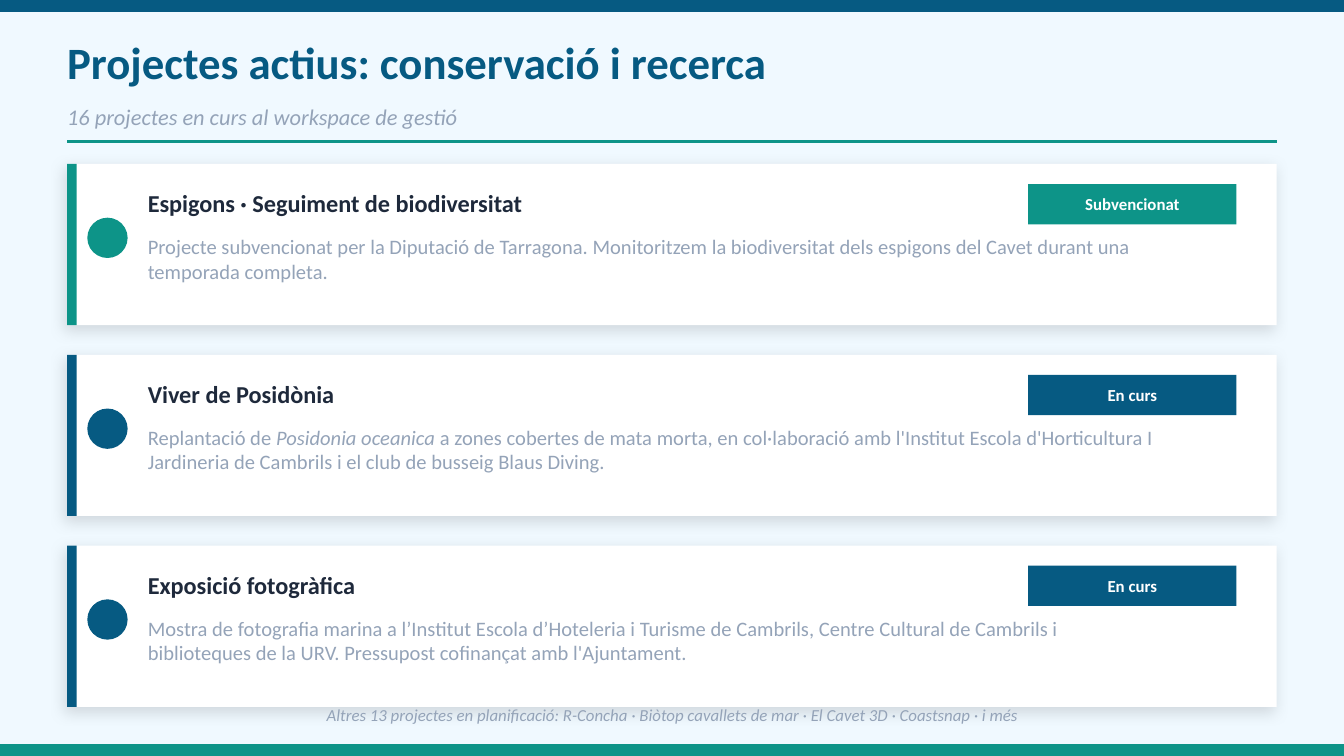
from dataclasses import dataclass

from lxml import etree
from pptx import Presentation
from pptx.dml.color import RGBColor
from pptx.enum.shapes import MSO_CONNECTOR as Connector, MSO_SHAPE as Shape
from pptx.enum.text import MSO_ANCHOR as Anchor, PP_ALIGN as Align
from pptx.oxml.ns import qn
from pptx.util import Inches, Pt


@dataclass(frozen=True)
class Theme:
    font: str = "Calibri"
    background: str = "F0F9FF"
    navy: str = "065A82"
    teal: str = "0D9488"
    muted: str = "94A3B8"
    ink: str = "1E293B"
    white: str = "FFFFFF"
    title: int = 24
    subtitle: int = 12
    heading: int = 13
    body: int = 11
    small: int = 9


THEME = Theme()
WIDTH = 10
HEIGHT = WIDTH * 9 / 16
MARGIN = 0.5
CONTENT_WIDTH = WIDTH - 2 * MARGIN
BAND_HEIGHT = 0.08
CARD_TOP, CARD_HEIGHT, CARD_GAP = 1.22, 1.2, 0.22

# Each project: heading, status, accent colour, description as (text, italic) runs
PROJECTS = [
    ("Espigons · Seguiment de biodiversitat", "Subvencionat", THEME.teal, [
        ("Projecte subvencionat per la Diputació de Tarragona. Monitoritzem la "
         "biodiversitat dels espigons del Cavet durant una temporada completa.", False),
    ]),
    ("Viver de Posidònia", "En curs", THEME.navy, [
        ("Replantació de ", False),
        ("Posidonia oceanica", True),
        (" a zones cobertes de mata morta, en col·laboració amb l'Institut Escola "
         "d'Horticultura I Jardineria de Cambrils i el club de busseig Blaus Diving.", False),
    ]),
    ("Exposició fotogràfica", "En curs", THEME.navy, [
        ("Mostra de fotografia marina a l’Institut Escola d’Hoteleria i Turisme de "
         "Cambrils, Centre Cultural de Cambrils i biblioteques de la URV. "
         "Pressupost cofinançat amb l'Ajuntament.", False),
    ]),
]


def color(value):
    return RGBColor.from_string(value)


def add_text(slide, box, runs, size, ink, bold=False, align=Align.LEFT, anchor=Anchor.MIDDLE):
    frame = slide.shapes.add_textbox(*map(Inches, box)).text_frame
    frame.word_wrap = True
    frame.vertical_anchor = anchor
    frame.margin_left = frame.margin_right = frame.margin_top = frame.margin_bottom = 0
    paragraph = frame.paragraphs[0]
    paragraph.alignment = align
    for text, italic in runs:
        run = paragraph.add_run()
        run.text = text
        run.font.name = THEME.font
        run.font.size = Pt(size)
        run.font.bold = bold
        run.font.italic = italic
        run.font.color.rgb = color(ink)


def add_block(slide, box, fill, kind=Shape.RECTANGLE, outlined=False):
    shape = slide.shapes.add_shape(kind, *map(Inches, box))
    shape.shadow.inherit = False
    shape.fill.solid()
    shape.fill.fore_color.rgb = color(fill)
    if outlined:
        shape.line.color.rgb = color(fill)
        shape.line.width = Pt(1)
    else:
        shape.line.fill.background()
    return shape


def add_soft_shadow(shape):
    effects = shape._element.spPr.find(qn("a:effectLst"))
    shadow = etree.SubElement(effects, qn("a:outerShdw"), blurRad=str(Pt(8)),
                              dist=str(Pt(3)), dir=str(135 * 60000),
                              algn="bl", rotWithShape="0")
    black = etree.SubElement(shadow, qn("a:srgbClr"), val="000000")
    etree.SubElement(black, qn("a:alpha"), val="12000")


def add_bands(slide, width, height):
    add_block(slide, (0, 0, width, BAND_HEIGHT), THEME.navy, outlined=True)
    add_block(slide, (0, height - BAND_HEIGHT, width, BAND_HEIGHT), THEME.teal, outlined=True)


def add_header(slide, left, top, width):
    add_text(slide, (left, top, width, 0.55),
             [("Projectes actius: conservació i recerca", False)],
             THEME.title, THEME.navy, bold=True)
    add_text(slide, (left, top + 0.54, width, 0.3),
             [("16 projectes en curs al workspace de gestió", True)],
             THEME.subtitle, THEME.muted)
    rule_y = Inches(top + 0.87)
    rule = slide.shapes.add_connector(Connector.STRAIGHT, Inches(left), rule_y,
                                      Inches(left + width), rule_y)
    rule.line.color.rgb = color(THEME.teal)
    rule.line.width = Pt(1.5)
    etree.SubElement(rule._element.spPr, qn("a:effectLst"))


def add_card(slide, left, top, width, height, project):
    heading, status, accent, description = project
    # Panel, accent stripe and marker dot
    add_soft_shadow(add_block(slide, (left, top, width, height), THEME.white))
    add_block(slide, (left, top, 0.07, height), accent)
    add_block(slide, (left + 0.15, top + 0.4, 0.3, 0.3), accent, Shape.OVAL)
    # Heading, status badge and description
    add_text(slide, (left + 0.6, top + 0.1, 6.4, 0.38), [(heading, False)],
             THEME.heading, THEME.ink, bold=True)
    badge = (left + width - 1.85, top + 0.15, 1.55, 0.3)
    add_block(slide, badge, accent)
    add_text(slide, badge, [(status, False)], THEME.small, THEME.white,
             bold=True, align=Align.CENTER)
    add_text(slide, (left + 0.6, top + 0.52, 7.5, 0.62), description,
             THEME.body, THEME.muted, anchor=Anchor.TOP)


def add_footer(slide, left, top, width):
    add_text(slide, (left, top, width, 0.3),
             [("Altres 13 projectes en planificació: R-Concha · Biòtop cavallets de mar · "
               "El Cavet 3D · Coastsnap · i més", True)],
             THEME.small, THEME.muted, align=Align.CENTER)


def main():
    presentation = Presentation()
    presentation.slide_width = Inches(WIDTH)
    presentation.slide_height = Inches(HEIGHT)
    slide = presentation.slides.add_slide(presentation.slide_layouts[6])
    slide.background.fill.solid()
    slide.background.fill.fore_color.rgb = color(THEME.background)

    add_bands(slide, WIDTH, HEIGHT)
    add_header(slide, MARGIN, 0.18, CONTENT_WIDTH)
    for index, project in enumerate(PROJECTS):
        top = CARD_TOP + index * (CARD_HEIGHT + CARD_GAP)
        add_card(slide, MARGIN, top, CONTENT_WIDTH, CARD_HEIGHT, project)
    add_footer(slide, MARGIN, 5.17, CONTENT_WIDTH)

    presentation.save("out.pptx")


if __name__ == "__main__":
    main()
